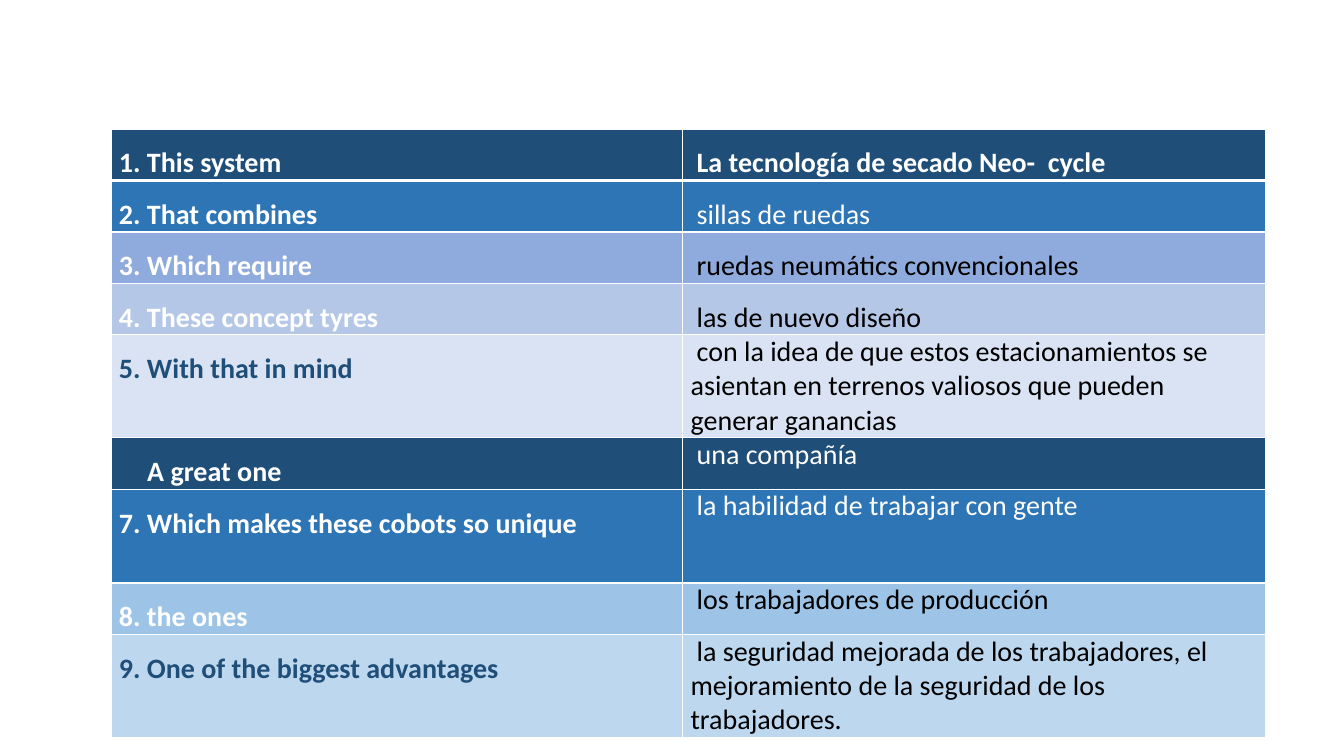
from lxml.etree import SubElement
from pptx import Presentation
from pptx.dml.color import RGBColor
from pptx.oxml.ns import qn
from pptx.util import Inches, Pt

WHITE = RGBColor(0xFF, 0xFF, 0xFF)
BLACK = RGBColor(0x00, 0x00, 0x00)
NAVY = RGBColor(0x1F, 0x4E, 0x79)
BLUE = RGBColor(0x2E, 0x75, 0xB6)
PERIWINKLE = RGBColor(0x8F, 0xAA, 0xDC)
LAVENDER = RGBColor(0xB4, 0xC7, 0xE7)
MIST = RGBColor(0xDA, 0xE3, 0xF3)
SKY = RGBColor(0x9D, 0xC3, 0xE6)
ICE = RGBColor(0xBD, 0xD7, 0xEE)

PHRASES = [
    (NAVY, "1. This system", WHITE, "La tecnología de secado Neo-  cycle", WHITE),
    (BLUE, "2. That combines", WHITE, "sillas de ruedas", WHITE),
    (PERIWINKLE, "3. Which require", WHITE, "ruedas neumátics convencionales", BLACK),
    (LAVENDER, "4. These concept tyres", WHITE, "las de nuevo diseño", BLACK),
    (MIST, "5. With that in mind", NAVY,
     "con la idea de que estos estacionamientos se asientan en terrenos valiosos "
     "que pueden generar ganancias", BLACK),
    (NAVY, "A great one", WHITE, "una compañía", WHITE),
    (BLUE, "7. Which makes these cobots so unique", WHITE,
     "la habilidad de trabajar con gente", WHITE),
    (SKY, "8. the ones", WHITE, "los trabajadores de producción", BLACK),
    (ICE, "9. One of the biggest advantages", NAVY,
     "la seguridad mejorada de los trabajadores, el mejoramiento de la seguridad "
     "de los trabajadores.", BLACK),
]
COLUMN_WIDTHS = (5.67, 5.78)
ROW_HEIGHT, TALL_ROW, TALL_HEIGHT = 0.44, 6, 0.93
LEFT, TOP = 1.1, 1.28
LOOSE_ROWS = 4
NUMBER_INDENT = 0.28
SPANISH_INDENT = 0.06


def set_borders(cell, bottom_width):
    properties = cell._tc.get_or_add_tcPr()
    widths = {"a:lnL": 1, "a:lnR": 1, "a:lnT": 1, "a:lnB": bottom_width}
    for position, (tag, width) in enumerate(widths.items()):
        line = SubElement(properties, qn(tag), w=str(Pt(width)))
        fill = SubElement(line, qn("a:solidFill"))
        SubElement(fill, qn("a:srgbClr"), val=str(WHITE))
        properties.insert(position, line)


def fill_cell(cell, fill, text, color, bold, spacing, indent, bottom_width):
    cell.margin_left = cell.margin_right = Inches(0.08)
    cell.margin_top = cell.margin_bottom = 0
    cell.fill.solid()
    cell.fill.fore_color.rgb = fill
    set_borders(cell, bottom_width)
    para = cell.text_frame.paragraphs[0]
    para.line_spacing = spacing
    para.space_before = Pt(6)
    para._p.get_or_add_pPr().set("indent", str(Inches(indent)))
    span = para.add_run()
    span.text = text
    span.font.name = "Calibri"
    span.font.size = Pt(20)
    span.font.bold = bold
    span.font.color.rgb = color


def main():
    deck = Presentation()
    deck.slide_width, deck.slide_height = Inches(13.33), Inches(7.5)
    page = deck.slides.add_slide(deck.slide_layouts[6])
    heights = [TALL_HEIGHT if row == TALL_ROW else ROW_HEIGHT for row in range(len(PHRASES))]
    table = page.shapes.add_table(
        len(PHRASES), len(COLUMN_WIDTHS), Inches(LEFT), Inches(TOP),
        Inches(sum(COLUMN_WIDTHS)), Inches(sum(heights))).table
    table.first_row = table.horz_banding = False
    for column, width in zip(table.columns, COLUMN_WIDTHS):
        column.width = Inches(width)
    for row, (fill, english, english_color, spanish, spanish_color) in enumerate(PHRASES):
        table.rows[row].height = Inches(heights[row])
        header = row == 0
        bottom_width = 3 if header else 1
        spacing = 1.5 if row < LOOSE_ROWS else 1.0
        indent = 0 if english[0].isdigit() else NUMBER_INDENT
        fill_cell(table.cell(row, 0), fill, english, english_color, True, 1.5, indent, bottom_width)
        fill_cell(table.cell(row, 1), fill, spanish, spanish_color, header, spacing,
                  SPANISH_INDENT, bottom_width)
    deck.save("out.pptx")


if __name__ == "__main__":
    main()
